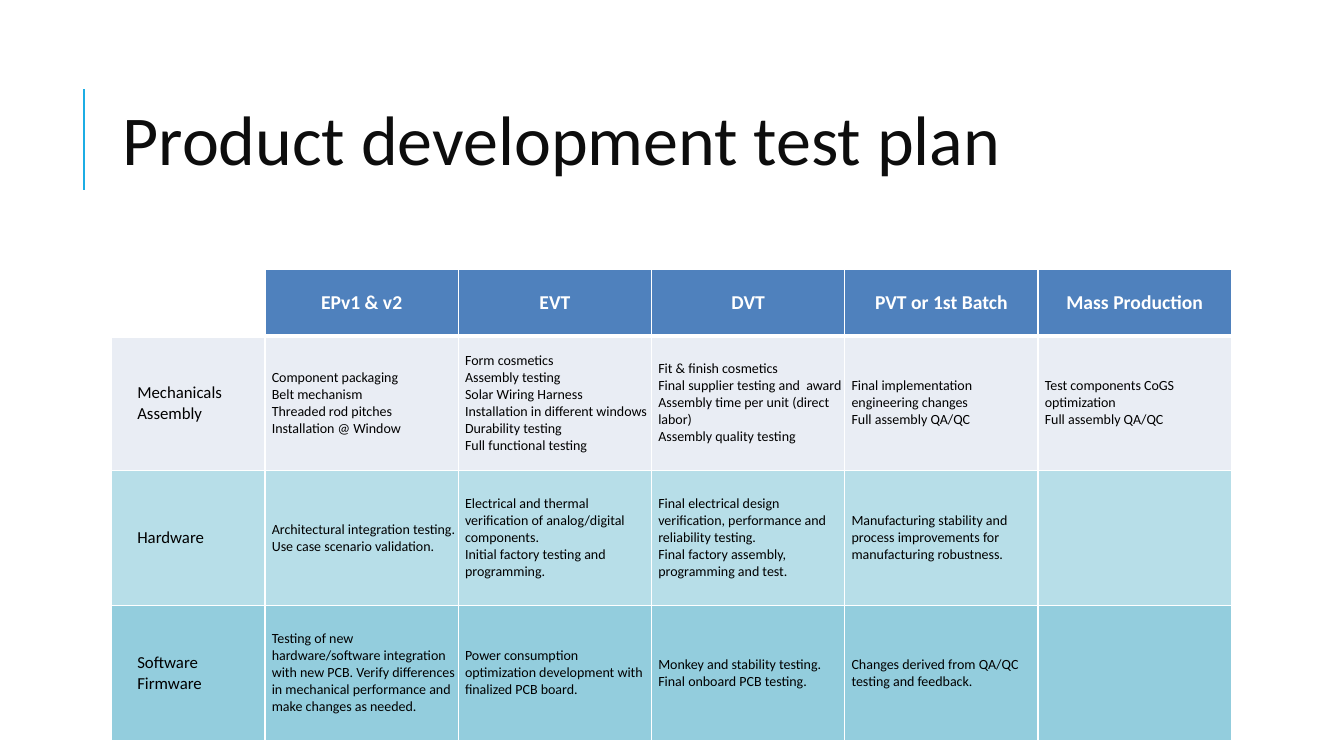
from dataclasses import dataclass

from pptx import Presentation
from pptx.dml.color import RGBColor
from pptx.enum.shapes import MSO_CONNECTOR as Connector
from pptx.enum.text import MSO_ANCHOR as Anchor, PP_ALIGN as Align
from pptx.oxml.ns import qn
from pptx.util import Cm, Pt
from lxml.etree import SubElement


@dataclass(frozen=True)
class Theme:
    font: str = "Calibri"
    ink: str = "000000"
    title_ink: str = "0D0D0D"
    white: str = "FFFFFF"
    accent: str = "1CADE4"
    header: str = "4F81BD"
    bands: tuple = ("E9EDF4", "B7DEE8", "93CDDD")
    title_size: int = 50
    header_size: int = 14
    area_size: int = 12
    body_size: int = 10


# A \n starts a paragraph, a \v breaks the line within one
PHASES = ["EPv1 & v2", "EVT", "DVT", "PVT or 1st Batch", "Mass Production"]
TESTS = {
    "Mechanicals\nAssembly": [
        "Component packaging\vBelt mechanism\vThreaded rod pitches\vInstallation @ Window",
        "Form cosmetics\vAssembly testing\vSolar Wiring Harness\v"
        "Installation in different windows\vDurability testing\vFull functional testing",
        "Fit & finish cosmetics\vFinal supplier testing and  award\v"
        "Assembly time per unit (direct labor)\vAssembly quality testing",
        "Final implementation engineering changes\vFull assembly QA/QC",
        "Test components CoGS optimization\vFull assembly QA/QC",
    ],
    "Hardware": [
        "Architectural integration testing. Use case scenario validation.",
        "Electrical and thermal verification of analog/digital components.\n"
        "Initial factory testing and programming.",
        "Final electrical design verification, performance and reliability testing.\n"
        "Final factory assembly, programming and test.",
        "Manufacturing stability and process improvements for manufacturing robustness.",
        "",
    ],
    "Software\nFirmware": [
        "Testing of new hardware/software integration with new PCB. Verify differences "
        "in mechanical performance and make changes as needed.",
        "Power consumption optimization development with finalized PCB board.",
        "Monkey and stability testing.\nFinal onboard PCB testing.",
        "Changes derived from QA/QC testing and feedback.",
        "",
    ],
}


class SlideBuilder:
    def __init__(self, slide, theme):
        self.slide = slide
        self.theme = theme

    def style(self, paragraph, size, color, bold=False):
        for run in paragraph.runs:
            run.font.name = self.theme.font
            run.font.size = Pt(size)
            run.font.bold = bold
            run.font.color.rgb = RGBColor.from_string(color)

    def rule(self, x, top, bottom):
        accent = self.slide.shapes.add_connector(
            Connector.STRAIGHT, Cm(x), Cm(bottom), Cm(x), Cm(top))
        accent.line.color.rgb = RGBColor.from_string(self.theme.accent)
        accent.line.width = Pt(1.5)
        SubElement(accent._element.spPr, qn("a:effectLst"))

    def title(self, text, left, top, width, height):
        frame = self.slide.shapes.add_textbox(
            Cm(left), Cm(top), Cm(width), Cm(height)).text_frame
        frame.word_wrap = True
        frame.vertical_anchor = Anchor.MIDDLE
        frame.text = text
        heading = frame.paragraphs[0]
        heading.line_spacing = 0.8
        self.style(heading, self.theme.title_size, self.theme.title_ink)

    def table(self, left, top, col_widths, row_heights):
        grid = self.slide.shapes.add_table(
            len(row_heights), len(col_widths), Cm(left), Cm(top),
            Cm(sum(col_widths)), Cm(sum(row_heights))).table
        grid.first_row = grid.horz_banding = False
        for column, width in zip(grid.columns, col_widths):
            column.width = Cm(width)
        for row, height in zip(grid.rows, row_heights):
            row.height = Cm(height)
        return grid

    def borders(self, cell, top=1, bottom=1):
        properties = cell._tc.get_or_add_tcPr()
        for side, width in (("L", 1), ("R", 1), ("T", top), ("B", bottom)):
            edge = SubElement(properties, qn(f"a:ln{side}"), w=str(Pt(width)))
            paint = SubElement(edge, qn("a:solidFill"))
            SubElement(paint, qn("a:srgbClr"), val=self.theme.white)

    def cell(self, cell, text, fill, size, color, indent=0, level=0, align=Align.LEFT, bold=False):
        cell.margin_left = cell.margin_right = cell.margin_top = cell.margin_bottom = 0
        cell.vertical_anchor = Anchor.MIDDLE
        cell.text_frame.text = text
        for paragraph in cell.text_frame.paragraphs:
            paragraph.alignment = align
            paragraph.level = level
            margins = paragraph._p.get_or_add_pPr()
            margins.set("marL", str(Cm(indent)))
            margins.set("indent", "0")
            self.style(paragraph, size, color, bold)
        if fill:
            cell.fill.solid()
            cell.fill.fore_color.rgb = RGBColor.from_string(fill)
        else:
            cell.fill.background()


def main():
    deck = Presentation()
    deck.slide_width, deck.slide_height = Cm(33.87), Cm(19.05)
    theme = Theme()
    builder = SlideBuilder(deck.slides.add_slide(deck.slide_layouts[6]), theme)

    # Title with its accent rule
    builder.rule(2.12, 2.25, 4.78)
    builder.title("Product development test plan", 2.84, 1.57, 27, 4.17)

    # Test plan grid: thick line between the header and the first area
    plan = builder.table(2.82, 6.78, [3.86] + [4.87] * len(PHASES), [1.68] + [3.4] * len(TESTS))
    for row in range(len(TESTS) + 1):
        for col in range(len(PHASES) + 1):
            builder.borders(plan.cell(row, col), top=3 if row == 1 else 1,
                            bottom=3 if row == 0 else 1)

    # Phase headers
    for col, phase in enumerate([""] + PHASES):
        builder.cell(plan.cell(0, col), phase, theme.header if phase else None,
                     theme.header_size, theme.white, align=Align.CENTER, bold=True)

    # Areas and their tests
    for row, ((area, tests), band) in enumerate(zip(TESTS.items(), theme.bands), start=1):
        builder.cell(plan.cell(row, 0), area, band, theme.area_size, theme.ink,
                     indent=0.64, level=1)
        for col, test in enumerate(tests, start=1):
            builder.cell(plan.cell(row, col), test, band, theme.body_size, theme.ink, indent=0.17)

    deck.save("out.pptx")


if __name__ == "__main__":
    main()
